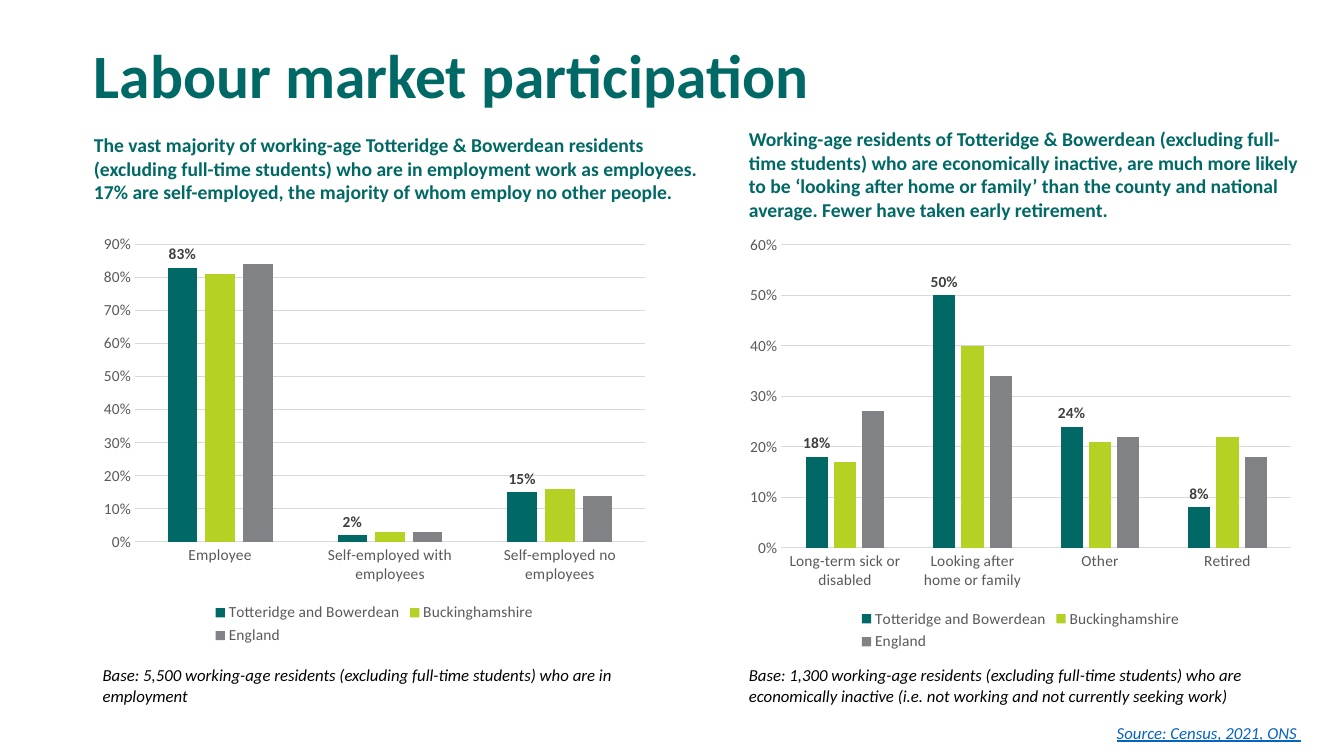
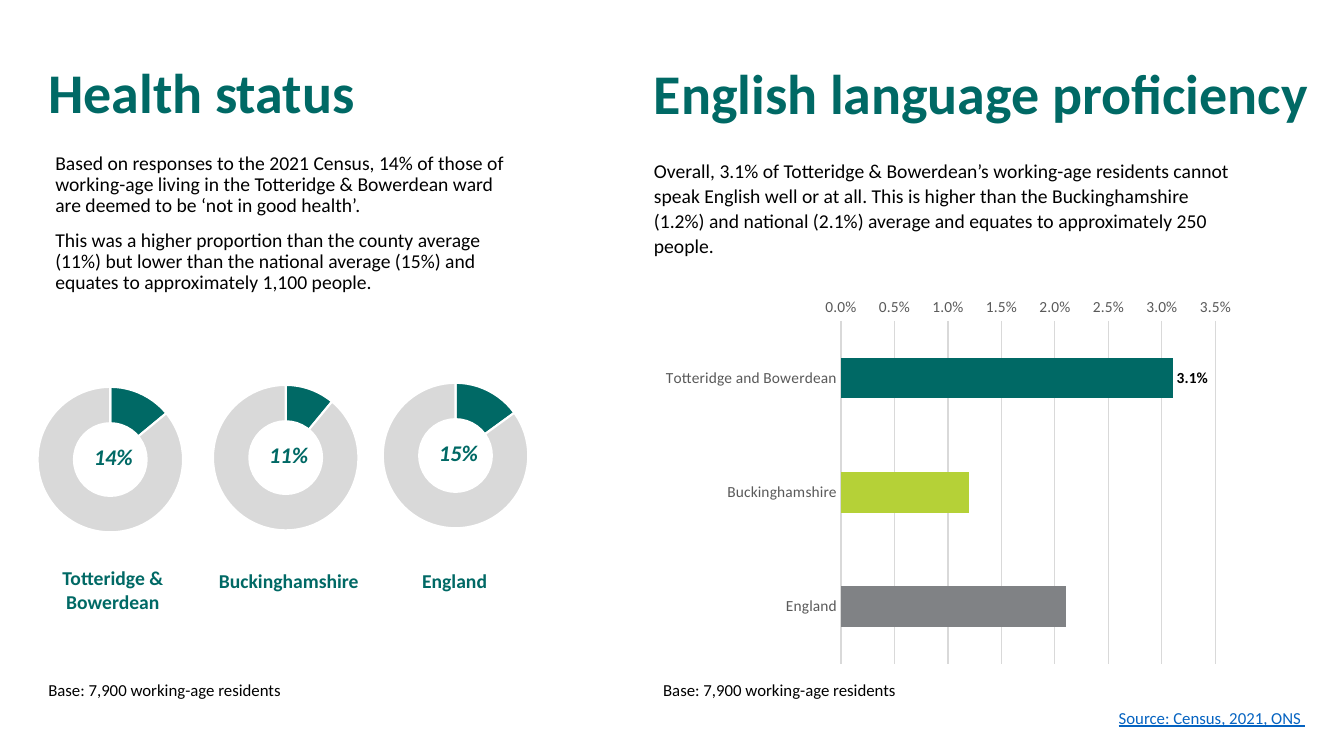
from dataclasses import dataclass
from typing import Optional

from pptx import Presentation
from pptx import util as u
from pptx.chart import data as chart_data
from pptx.dml.color import RGBColor
from pptx.enum import chart as chart_kinds
from pptx.enum import text

COLOURS = {
    "teal": "006965", "lime": "B5D123", "soft_lime": "B5D137", "grey": "808285",
    "pale": "D9D9D9", "axis": "595959", "label": "404040",
    "black": "000000", "white": "FFFFFF", "link": "0563C1",
}
FONT = "Calibri"
AREAS = ("Totteridge and Bowerdean", "Buckinghamshire", "England")
SOURCE = "Source: Census, 2021, ONS "
HEALTH_BASE = "Base: 7,900 working-age residents"


@dataclass(frozen=True)
class Frame:
    left: float
    top: float
    width: float
    height: float

    def lengths(self) -> tuple:
        return tuple(u.Pt(n) for n in (self.left, self.top, self.width, self.height))


@dataclass(frozen=True)
class Style:
    size: float
    colour: str = "black"
    bold: bool = False
    italic: bool = False
    underline: bool = False
    align: text.PP_ALIGN = text.PP_ALIGN.LEFT
    anchor: text.MSO_ANCHOR = text.MSO_ANCHOR.TOP
    line_spacing: Optional[float] = None
    before: float = 0
    after: float = 0


@dataclass(frozen=True)
class Columns:
    frame: Frame
    categories: tuple
    values: tuple
    maximum: float


@dataclass(frozen=True)
class Ring:
    centre: float
    top: float
    percent: int
    caption: str
    caption_frame: Frame


# Text styles
MIDDLE, CENTRE = text.MSO_ANCHOR.MIDDLE, text.PP_ALIGN.CENTER
MAIN_TITLE = Style(44, "teal", bold=True, anchor=MIDDLE, line_spacing=0.9)
HALF_TITLE = Style(40, "teal", bold=True, anchor=MIDDLE, line_spacing=0.9)
HEADLINE = Style(14, "teal", bold=True)
CAPTION = Style(14, "teal", bold=True, align=CENTRE)
RING_VALUE = Style(16, "teal", bold=True, italic=True, align=CENTRE)
HEALTH_BODY = Style(14, line_spacing=0.9, before=10)
LANGUAGE_BODY = Style(14, line_spacing=1.07, after=8)
BASE = Style(12)
BASE_ITALIC = Style(12, italic=True)
LINK = Style(12, "link", underline=True)
LINK_ITALIC = Style(12, "link", italic=True, underline=True)
AXIS = Style(11, "axis")
COLUMN_LABEL = Style(11, "label", bold=True)
BAR_LABEL = Style(11, bold=True)

# Slide content
COLUMN_CHARTS = (
    Columns(Frame(66.2, 162, 402.5, 301.7),
            ("Employee", "Self-employed with employees", "Self-employed no employees"),
            ((0.83, 0.02, 0.15), (0.81, 0.03, 0.16), (0.84, 0.03, 0.14)), 0.9),
    Columns(Frame(527.8, 162, 402.5, 306),
            ("Long-term sick or disabled", "Looking after home or family", "Other", "Retired"),
            ((0.18, 0.5, 0.24, 0.08), (0.17, 0.4, 0.21, 0.22), (0.27, 0.34, 0.22, 0.18)), 0.6),
)
LABOUR_TEXTS = (
    (Frame(60, 3.6, 828, 104.4), MAIN_TITLE, "Labour market participation"),
    (Frame(60, 91.4, 446.4, 58.3), HEADLINE,
     "The vast majority of working-age Totteridge & Bowerdean residents (excluding full-time "
     "students) who are in employment work as employees. 17% are self-employed, the majority "
     "of whom employ no other people."),
    (Frame(527.8, 87.1, 419, 74.9), HEADLINE,
     "Working-age residents of Totteridge & Bowerdean (excluding full-time students) who are "
     "economically inactive, are much more likely to be ‘looking after home or family’ than "
     "the county and national average. Fewer have taken early retirement."),
    (Frame(66.2, 471.6, 420.5, 36), BASE_ITALIC,
     "Base: 5,500 working-age residents (excluding full-time students) who are in employment"),
    (Frame(527.8, 471.6, 420.5, 36), BASE_ITALIC,
     "Base: 1,300 working-age residents (excluding full-time students) who are economically "
     "inactive (i.e. not working and not currently seeking work)"),
    (Frame(790.6, 512.6, 155.5, 21.6), LINK_ITALIC, SOURCE),
)
HEALTH_TEXTS = (
    (Frame(27.4, 15.8, 400, 104.4), HALF_TITLE, "Health status"),
    (Frame(460, 16.6, 499, 104.4), HALF_TITLE, "English language proficiency"),
    (Frame(32.4, 105.8, 347, 123.8), HEALTH_BODY,
     "Based on responses to the 2021 Census, 14% of those of working-age living in the "
     "Totteridge & Bowerdean ward are deemed to be ‘not in good health’.",
     "This was a higher proportion than the county average (11%) but lower than the national "
     "average (15%) and equates to approximately 1,100 people."),
    (Frame(460, 108.7, 426.2, 79.2), LANGUAGE_BODY,
     "Overall, 3.1% of Totteridge & Bowerdean’s working-age residents cannot speak English "
     "well or at all. This is higher than the Buckinghamshire (1.2%) and national (2.1%) "
     "average and equates to approximately 250 people."),
    (Frame(27.4, 481.7, 420.5, 21.6), BASE, HEALTH_BASE),
    (Frame(466.6, 481.7, 420.5, 21.6), BASE, HEALTH_BASE),
    (Frame(792, 501.8, 155.5, 21.6), LINK, SOURCE),
)
RINGS = (
    Ring(78.8, 266.4, 14, "Totteridge & Bowerdean", Frame(35.3, 401, 90.7, 41)),
    Ring(204.1, 265, 11, "Buckinghamshire", Frame(148.3, 402.5, 116, 24.5)),
    Ring(325.4, 263.5, 15, "England", Frame(272.2, 402.5, 105.1, 24.5)),
)


def colour(name: str) -> RGBColor:
    return RGBColor.from_string(COLOURS[name])


def paint(target, name: str) -> None:
    target.fill.solid()
    target.fill.fore_color.rgb = colour(name)


def set_font(font, style: Style) -> None:
    font.name = FONT
    font.size = u.Pt(style.size)
    font.bold = style.bold
    font.italic = style.italic
    font.underline = style.underline
    font.color.rgb = colour(style.colour)


def add_text(page, frame: Frame, style: Style, *paragraphs: str) -> None:
    box = page.shapes.add_textbox(*frame.lengths())
    box.text_frame.word_wrap = True
    box.text_frame.vertical_anchor = style.anchor
    for index, words in enumerate(paragraphs):
        para = box.text_frame.add_paragraph() if index else box.text_frame.paragraphs[0]
        para.alignment = style.align
        para.space_before = u.Pt(style.before)
        para.space_after = u.Pt(style.after)
        if style.line_spacing:
            para.line_spacing = style.line_spacing
        span = para.add_run()
        span.text = words
        set_font(span.font, style)


def add_chart(page, kind, frame: Frame, categories: tuple, series: dict, number_format: str):
    data = chart_data.CategoryChartData(number_format=number_format)
    data.categories = categories
    for name, values in series.items():
        data.add_series(name, values)
    chart = page.shapes.add_chart(kind, *frame.lengths(), data).chart
    chart.has_title = False
    chart.has_legend = False
    chart.plots[0].vary_by_categories = False
    set_font(chart.font, AXIS)
    return chart


def style_axes(chart, maximum: float, step: float, number_format: str) -> None:
    values = chart.value_axis
    values.minimum_scale, values.maximum_scale, values.major_unit = 0, maximum, step
    values.tick_labels.number_format = number_format
    values.tick_labels.number_format_is_linked = False
    values.format.line.fill.background()
    values.has_major_gridlines = True
    for line in (values.major_gridlines.format.line, chart.category_axis.format.line):
        line.color.rgb = colour("pale")
        line.width = u.Pt(0.75)
    for axis in (values, chart.category_axis):
        axis.major_tick_mark = axis.minor_tick_mark = chart_kinds.XL_TICK_MARK.NONE
        set_font(axis.tick_labels.font, AXIS)


def add_columns(page, columns: Columns) -> None:
    chart = add_chart(page, chart_kinds.XL_CHART_TYPE.COLUMN_CLUSTERED, columns.frame,
                      columns.categories, dict(zip(AREAS, columns.values)), "0%")
    style_axes(chart, columns.maximum, 0.1, "0%")
    chart.has_legend = True
    chart.legend.position = chart_kinds.XL_LEGEND_POSITION.BOTTOM
    chart.legend.include_in_layout = False
    set_font(chart.legend.font, AXIS)
    plot = chart.plots[0]
    plot.gap_width, plot.overlap = 219, -27
    for series, fill in zip(plot.series, ("teal", "lime", "grey")):
        paint(series.format, fill)
    labels = plot.series[0].data_labels
    labels.show_value = True
    labels.number_format = "0%"
    labels.number_format_is_linked = False
    labels.position = chart_kinds.XL_LABEL_POSITION.OUTSIDE_END
    set_font(labels.font, COLUMN_LABEL)


def add_ring(page, ring: Ring) -> None:
    width, height = 144, 123.8
    frame = Frame(ring.centre - width / 2, ring.top, width, height)
    chart = add_chart(page, chart_kinds.XL_CHART_TYPE.DOUGHNUT, frame, ("1", "2"),
                      {"Series 1": (ring.percent, 100 - ring.percent)}, "General")
    for index, fill in enumerate(("teal", "pale")):
        slice_format = chart.plots[0].series[0].points[index].format
        paint(slice_format, fill)
        slice_format.line.color.rgb = colour("white")
        slice_format.line.width = u.Pt(1.5)
    add_text(page, Frame(ring.centre - 22, ring.top + 46.8, 48.2, 26.6),
             RING_VALUE, f"{ring.percent}%")
    add_text(page, ring.caption_frame, CAPTION, ring.caption)


def add_language_bars(page) -> None:
    chart = add_chart(page, chart_kinds.XL_CHART_TYPE.BAR_CLUSTERED,
                      Frame(467.3, 207.4, 420.5, 272.2), AREAS,
                      {"Series 1": (0.031, 0.012, 0.021)}, "0.0%")
    style_axes(chart, 0.035, 0.005, "0.0%")
    chart.category_axis.reverse_order = True
    chart.plots[0].gap_width = 182
    series = chart.plots[0].series[0]
    for index, fill in enumerate(("teal", "soft_lime", "grey")):
        paint(series.points[index].format, fill)
    series.data_labels.show_value = False
    label = series.points[0].data_label
    set_font(label.font, BAR_LABEL)
    label.position = chart_kinds.XL_LABEL_POSITION.OUTSIDE_END


def add_page(deck, texts: tuple):
    page = deck.slides.add_slide(deck.slide_layouts[6])
    for frame, style, *paragraphs in texts:
        add_text(page, frame, style, *paragraphs)
    return page


def main() -> None:
    deck = Presentation()
    deck.slide_width, deck.slide_height = u.Pt(960), u.Pt(540)

    # Labour market
    labour = add_page(deck, LABOUR_TEXTS)
    for columns in COLUMN_CHARTS:
        add_columns(labour, columns)

    # Health and language
    health = add_page(deck, HEALTH_TEXTS)
    for ring in RINGS:
        add_ring(health, ring)
    add_language_bars(health)

    deck.save("out.pptx")


if __name__ == "__main__":
    main()
